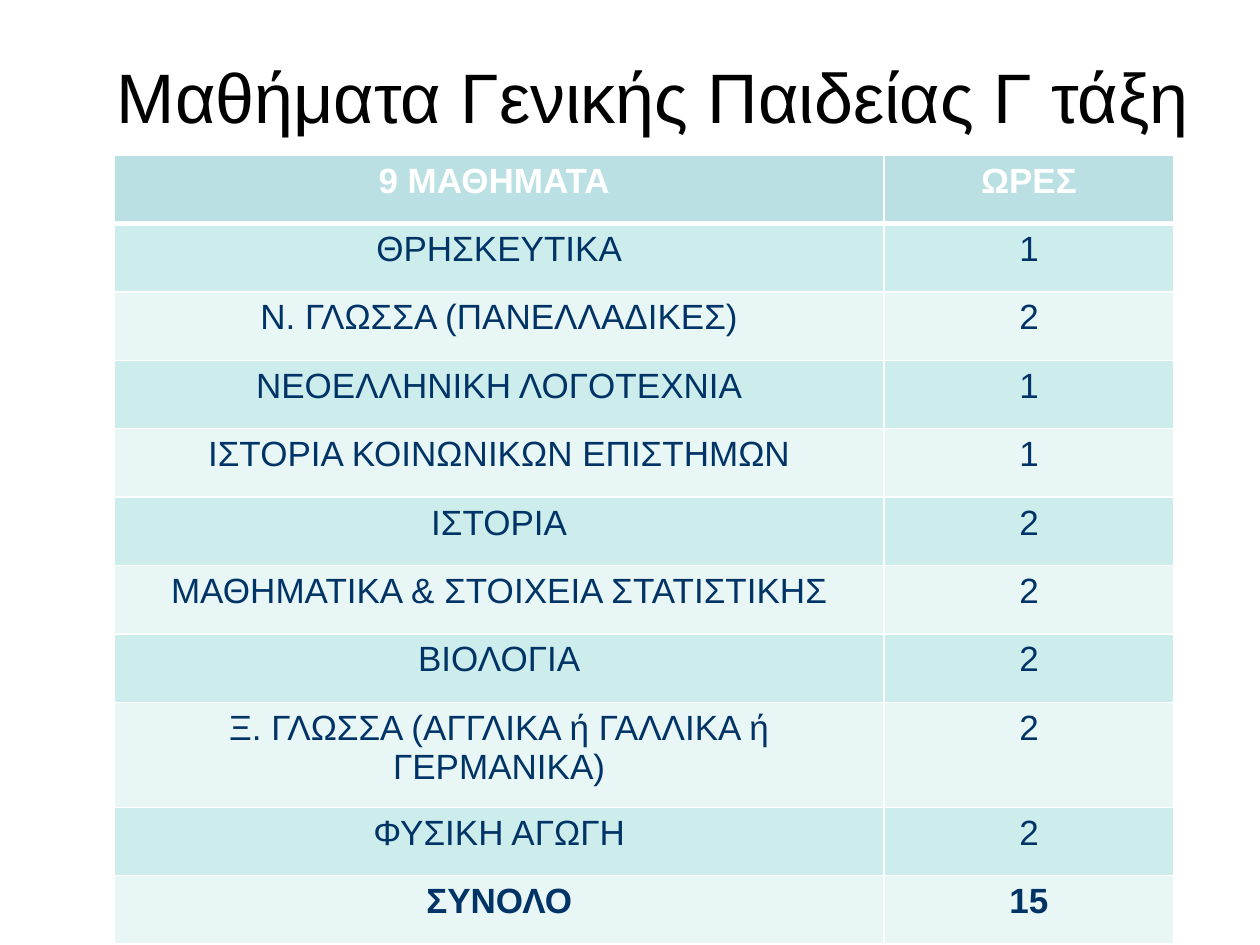
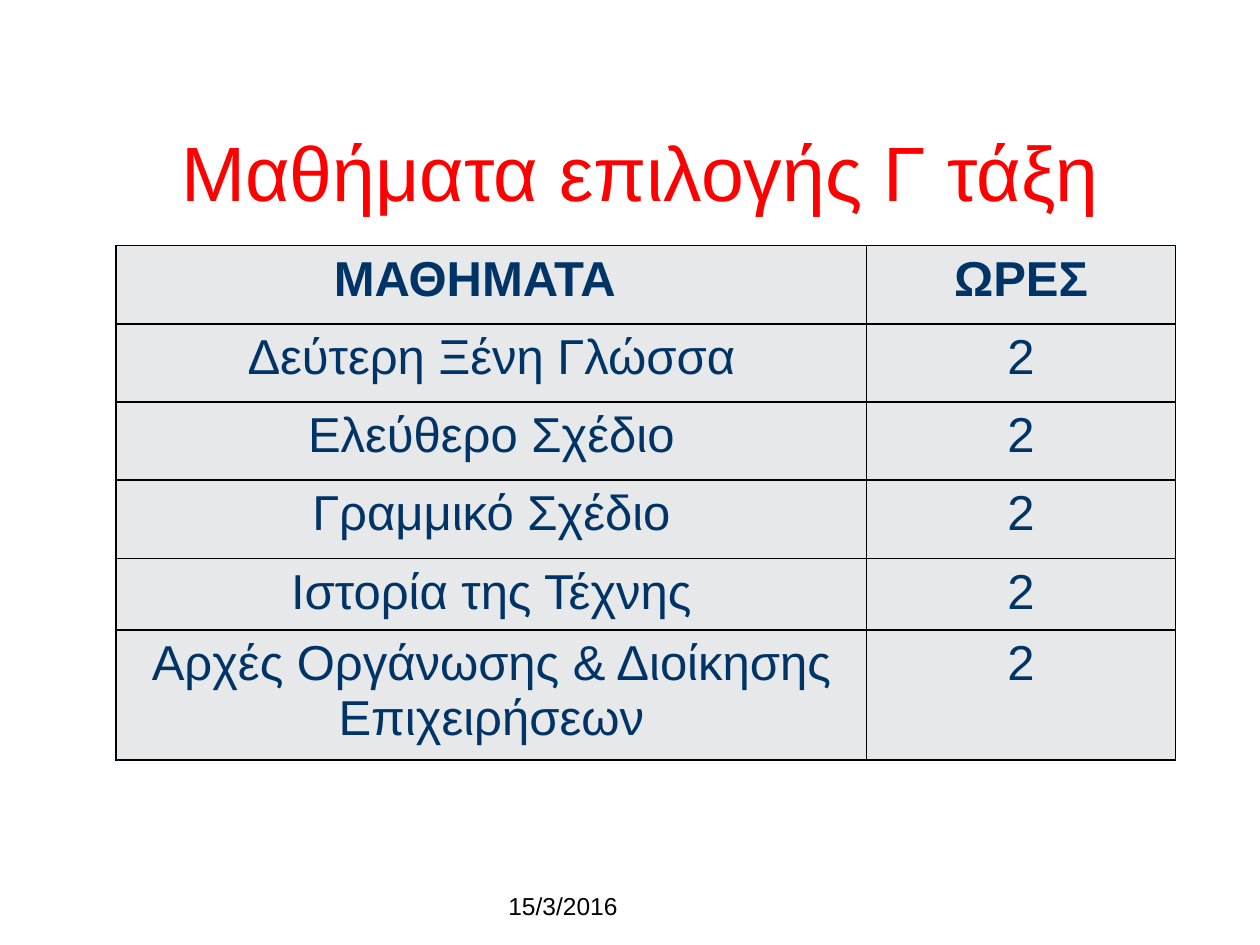
from dataclasses import dataclass

from lxml import etree
from pptx import Presentation
from pptx.dml.color import RGBColor
from pptx.enum.text import MSO_ANCHOR, MSO_AUTO_SIZE, PP_ALIGN
from pptx.oxml.ns import qn
from pptx.util import Pt

CENTER, RIGHT = PP_ALIGN.CENTER, PP_ALIGN.RIGHT
BOTTOM = MSO_ANCHOR.BOTTOM
NO_FIT = MSO_AUTO_SIZE.NONE
TITLE_ONLY = 5


@dataclass(frozen=True)
class Theme:
    font: str = "Arial"
    black: str = "000000"
    white: str = "FFFFFF"
    red: str = "FF0000"
    navy: str = "003366"
    header_teal: str = "BBE0E3"
    bands: tuple = ("CDECEC", "E8F6F6")
    grey: str = "E7E8EA"
    title_size: int = 40
    large_title_size: int = 44
    general_size: int = 20
    elective_size: int = 28
    date_size: int = 14


T = Theme()

GENERAL = [
    ("9 ΜΑΘΗΜΑΤΑ", "ΩΡΕΣ"),
    ("ΘΡΗΣΚΕΥΤΙΚΑ", "1"),
    ("Ν. ΓΛΩΣΣΑ (ΠΑΝΕΛΛΑΔΙΚΕΣ)", "2"),
    ("ΝΕΟΕΛΛΗΝΙΚΗ ΛΟΓΟΤΕΧΝΙΑ", "1"),
    ("ΙΣΤΟΡΙΑ ΚΟΙΝΩΝΙΚΩΝ ΕΠΙΣΤΗΜΩΝ", "1"),
    ("ΙΣΤΟΡΙΑ", "2"),
    ("ΜΑΘΗΜΑΤΙΚΑ & ΣΤΟΙΧΕΙΑ ΣΤΑΤΙΣΤΙΚΗΣ", "2"),
    ("ΒΙΟΛΟΓΙΑ", "2"),
    ("Ξ. ΓΛΩΣΣΑ (ΑΓΓΛΙΚΑ ή ΓΑΛΛΙΚΑ ή ΓΕΡΜΑΝΙΚΑ)", "2"),
    ("ΦΥΣΙΚΗ ΑΓΩΓΗ", "2"),
    ("ΣΥΝΟΛΟ", "15"),
]
ELECTIVES = [
    ("ΜΑΘΗΜΑΤΑ", "ΩΡΕΣ"),
    ("Δεύτερη Ξένη Γλώσσα", "2"),
    ("Ελεύθερο Σχέδιο", "2"),
    ("Γραμμικό Σχέδιο", "2"),
    ("Ιστορία της Τέχνης", "2"),
    ("Αρχές Οργάνωσης & Διοίκησης Επιχειρήσεων", "2"),
]


def set_all(obj, values):
    for name, value in values.items():
        setattr(obj, name, value)


def write(tf, text, size, color, align=CENTER, bold=False):
    p = tf.paragraphs[0]
    p.alignment = align
    r = p.add_run()
    r.text = text
    set_all(r.font, {"name": T.font, "size": Pt(size), "bold": bold})
    r.font.color.rgb = RGBColor.from_string(color)


def place(sp, box):
    names = ("left", "top", "width", "height")
    set_all(sp, {n: Pt(v) for n, v in zip(names, box)})


def add_title(s, box, text, size, color):
    sp = s.shapes.title
    place(sp, box)
    tf = sp.text_frame
    set_all(tf, {"vertical_anchor": BOTTOM, "auto_size": NO_FIT, "word_wrap": True})
    write(tf, text, size, color)


def add_date(s, box, text):
    tf = s.shapes.add_textbox(*map(Pt, box)).text_frame
    set_all(tf, {"vertical_anchor": BOTTOM, "word_wrap": True})
    write(tf, text, T.date_size, T.black, RIGHT)


def set_borders(cell, color, widths):
    tc_pr = cell._tc.get_or_add_tcPr()
    for i, side in enumerate("LRTB"):
        ln = etree.Element(qn(f"a:ln{side}"), w=str(Pt(widths.get(side, 1))))
        fill = etree.SubElement(ln, qn("a:solidFill"))
        etree.SubElement(fill, qn("a:srgbClr"), val=color)
        tc_pr.insert(i, ln)


def add_hours_table(s, box, rows, heights, hours_width, style):
    left, top, width = box
    frame = s.shapes.add_table(len(rows), 2, *map(Pt, (left, top, width, sum(heights))))
    table = frame.table
    set_all(table, {"first_row": False, "horz_banding": False})
    table.columns[0].width = Pt(width - hours_width)
    table.columns[1].width = Pt(hours_width)
    for i, row in enumerate(rows):
        table.rows[i].height = Pt(heights[i])
        fill = style["bands"][(i - 1) % len(style["bands"])] if i else style["header_fill"]
        color = T.navy if i else style["header_color"]
        widths = {0: {"B": style["rule"]}, 1: {"T": style["rule"]}}.get(i, {})
        for j, text in enumerate(row):
            cell = table.cell(i, j)
            cell.fill.solid()
            cell.fill.fore_color.rgb = RGBColor.from_string(fill)
            set_borders(cell, style["border"], widths)
            bold = i == 0 or row[0] == "ΣΥΝΟΛΟ"
            write(cell.text_frame, text, style["size"], color, bold=bold)
    table.cell(0, 0).margin_right = Pt(style["header_margin"])


def general_slide(prs):
    s = prs.slides.add_slide(prs.slide_layouts[TITLE_ONLY])
    add_title(s, (42.5, -13.7, 661, 95.8), "Μαθήματα Γενικής Παιδείας Γ τάξη",
              T.title_size, T.black)
    heights = [60 if len(name) > 40 else 39.1 for name, _ in GENERAL]
    style = {"size": T.general_size, "header_fill": T.header_teal,
             "header_color": T.white, "bands": T.bands, "border": T.white,
             "rule": 3, "header_margin": 13}
    add_hours_table(s, (65.3, 88.6, 605.5), GENERAL, heights, 165.6, style)


def elective_slide(prs):
    s = prs.slides.add_slide(prs.slide_layouts[TITLE_ONLY])
    add_title(s, (54, 37.4, 624, 90), "Μαθήματα επιλογής Γ τάξη",
              T.large_title_size, T.red)
    add_date(s, (192, 492, 168, 37.4), "15/3/2016")
    style = {"size": T.elective_size, "header_fill": T.grey,
             "header_color": T.navy, "bands": (T.grey,), "border": T.black,
             "rule": 1, "header_margin": 26}
    heights = [44.7] * 4 + [40.5, 69.7]
    add_hours_table(s, (66.2, 140.4, 605.5), ELECTIVES, heights, 176.4, style)


def main():
    prs = Presentation()
    set_all(prs, {"slide_width": Pt(720), "slide_height": Pt(540)})
    general_slide(prs)
    elective_slide(prs)
    prs.save("out.pptx")


if __name__ == "__main__":
    main()
